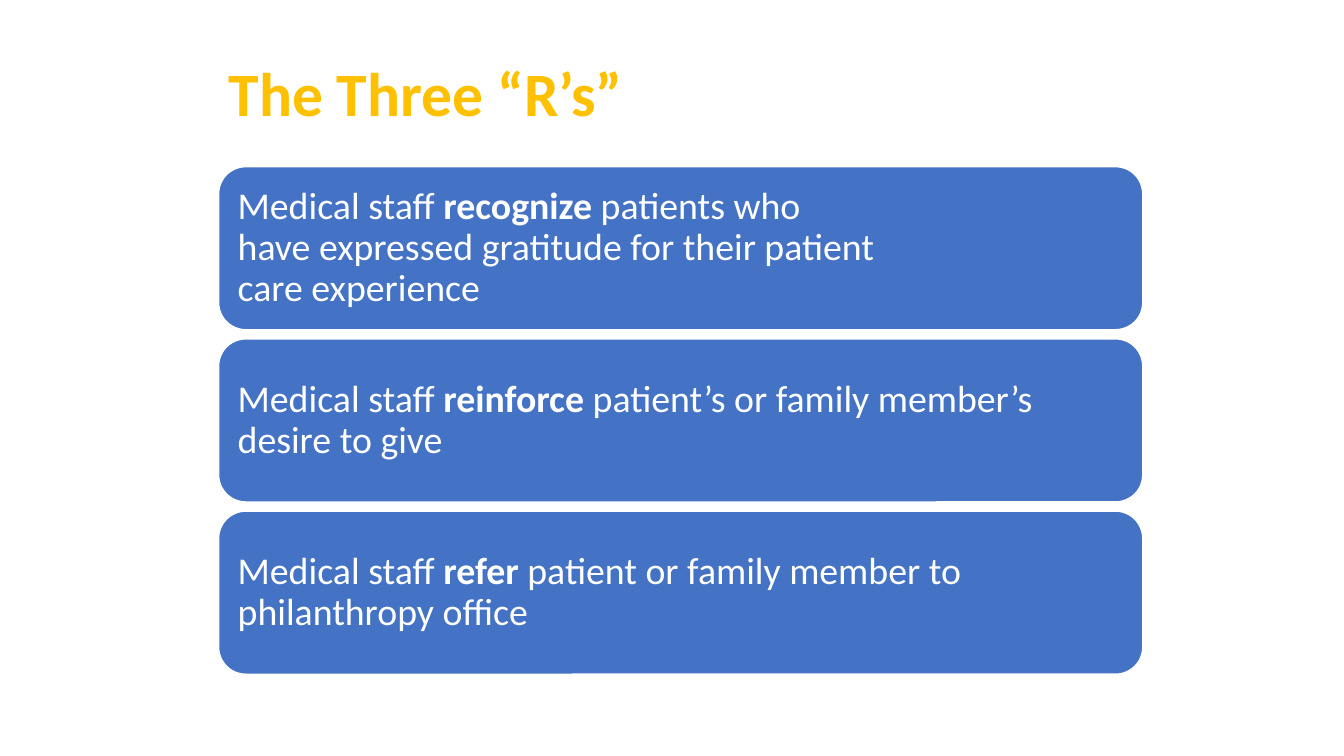
from pptx import Presentation
from pptx.dml.color import RGBColor
from pptx.enum.shapes import MSO_SHAPE
from pptx.enum.text import MSO_ANCHOR, PP_ALIGN
from pptx.util import Cm, Pt

# Content: runs of (words, bold)
TITLE = [("The Three “R’s”", True)]
STEPS = [
    [("Medical staff ", False), ("recognize", True),
     (" patients who \nhave expressed gratitude for their patient \ncare experience", False)],
    [("Medical staff ", False), ("reinforce", True),
     (" patient’s or family member’s desire to give", False)],
    [("Medical staff ", False), ("refer", True),
     (" patient or family member to philanthropy office", False)],
]

THEME = {
    "font": "Calibri",
    "gold": RGBColor(0xFF, 0xC0, 0x00),
    "blue": RGBColor(0x44, 0x72, 0xC4),
    "white": RGBColor(0xFF, 0xFF, 0xFF),
    "title": Pt(44),
    "body": Pt(27),
}

# Layout in centimetres
LEFT, TOP = 5.51, 4.2
WIDTH, HEIGHT, GAP = 23.29, 4.11, 0.23


def write(shape, runs, *, size, color, pad):
    frame = shape.text_frame
    frame.word_wrap = True
    frame.vertical_anchor = MSO_ANCHOR.MIDDLE
    frame.margin_left = frame.margin_right = Cm(pad)
    frame.margin_top = frame.margin_bottom = Cm(pad)
    para = frame.paragraphs[0]
    para.alignment = PP_ALIGN.LEFT
    para.line_spacing = 0.9
    for words, bold in runs:
        for row, line in enumerate(words.split("\n")):
            if row:
                para.add_line_break()
            run = para.add_run()
            run.text = line
            font = run.font
            font.name, font.size, font.bold = THEME["font"], size, bold
            font.color.rgb = color


deck = Presentation()
deck.slide_width, deck.slide_height = Cm(33.87), Cm(19.05)
slide = deck.slides.add_slide(deck.slide_layouts[6])

# Title
head = slide.shapes.add_textbox(Cm(LEFT), Cm(0.84), Cm(22.86), Cm(3.18))
write(head, TITLE, size=THEME["title"], color=THEME["gold"], pad=0.25)

# One card for each step
for i, step in enumerate(STEPS):
    top = TOP + i * (HEIGHT + GAP)
    card = slide.shapes.add_shape(
        MSO_SHAPE.ROUNDED_RECTANGLE, Cm(LEFT), Cm(top), Cm(WIDTH), Cm(HEIGHT))
    card.shadow.inherit = False
    card.fill.solid()
    card.fill.fore_color.rgb = THEME["blue"]
    card.line.color.rgb = THEME["white"]
    card.line.width = Pt(1)
    write(card, step, size=THEME["body"], color=THEME["white"], pad=0.28)

deck.save("out.pptx")
